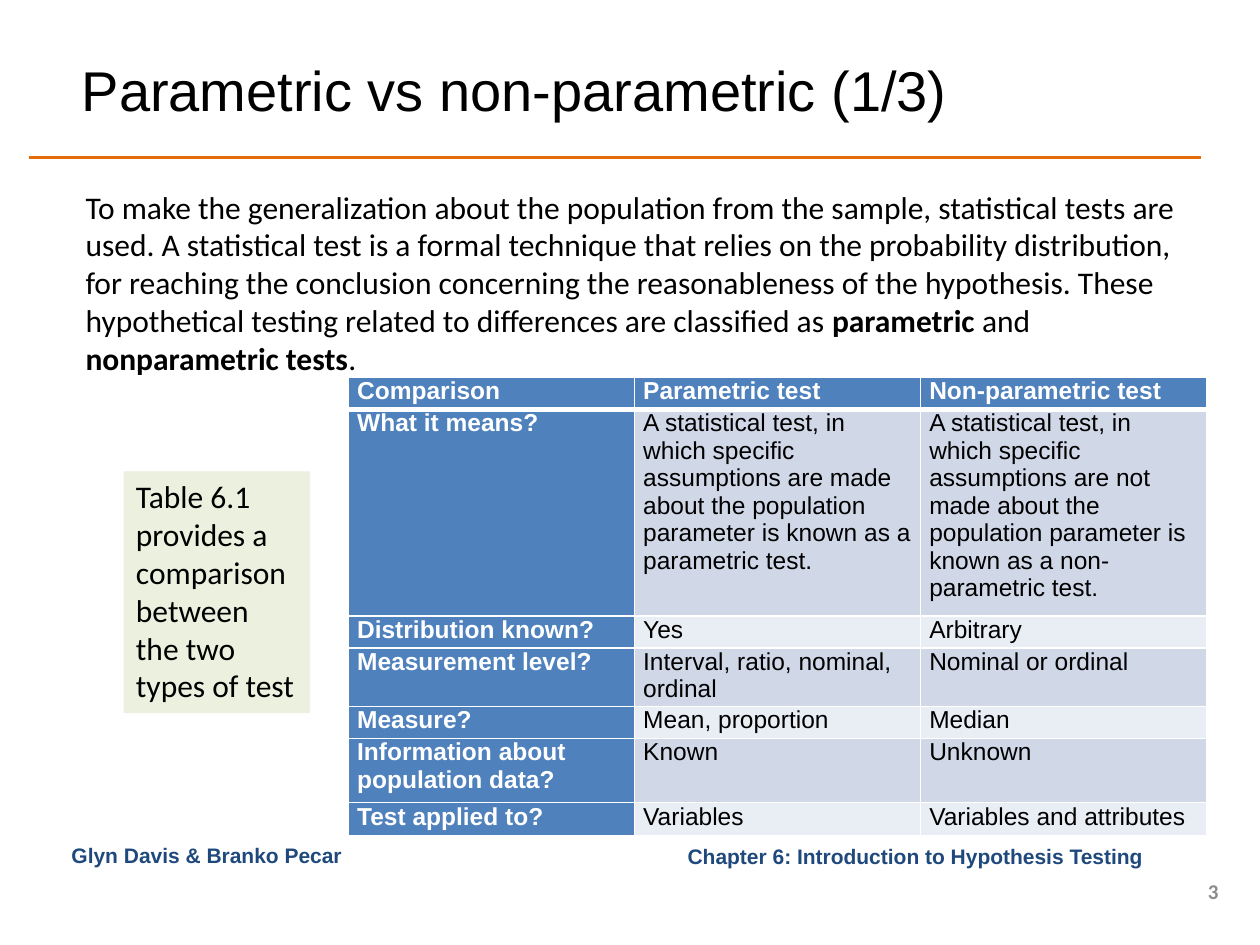
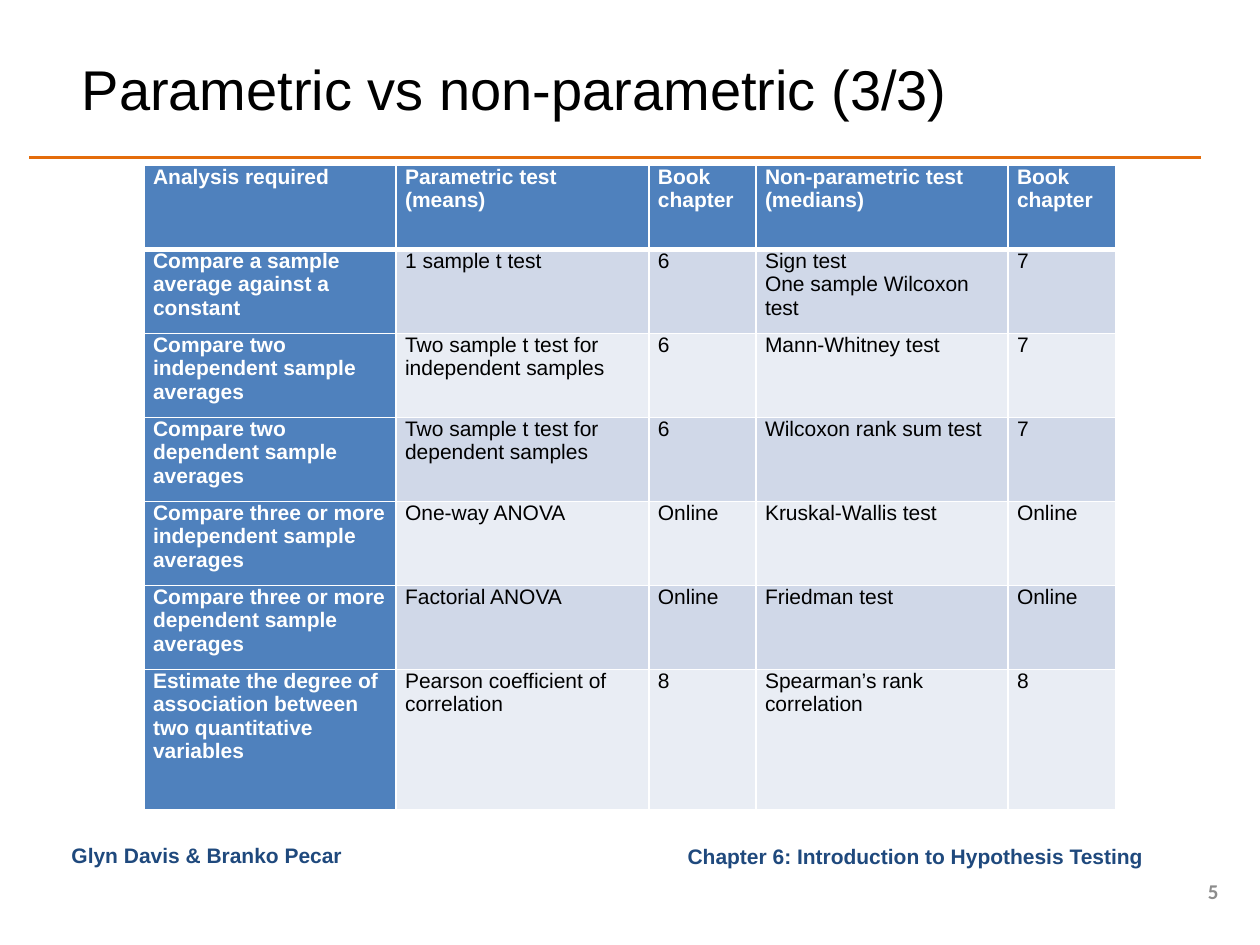
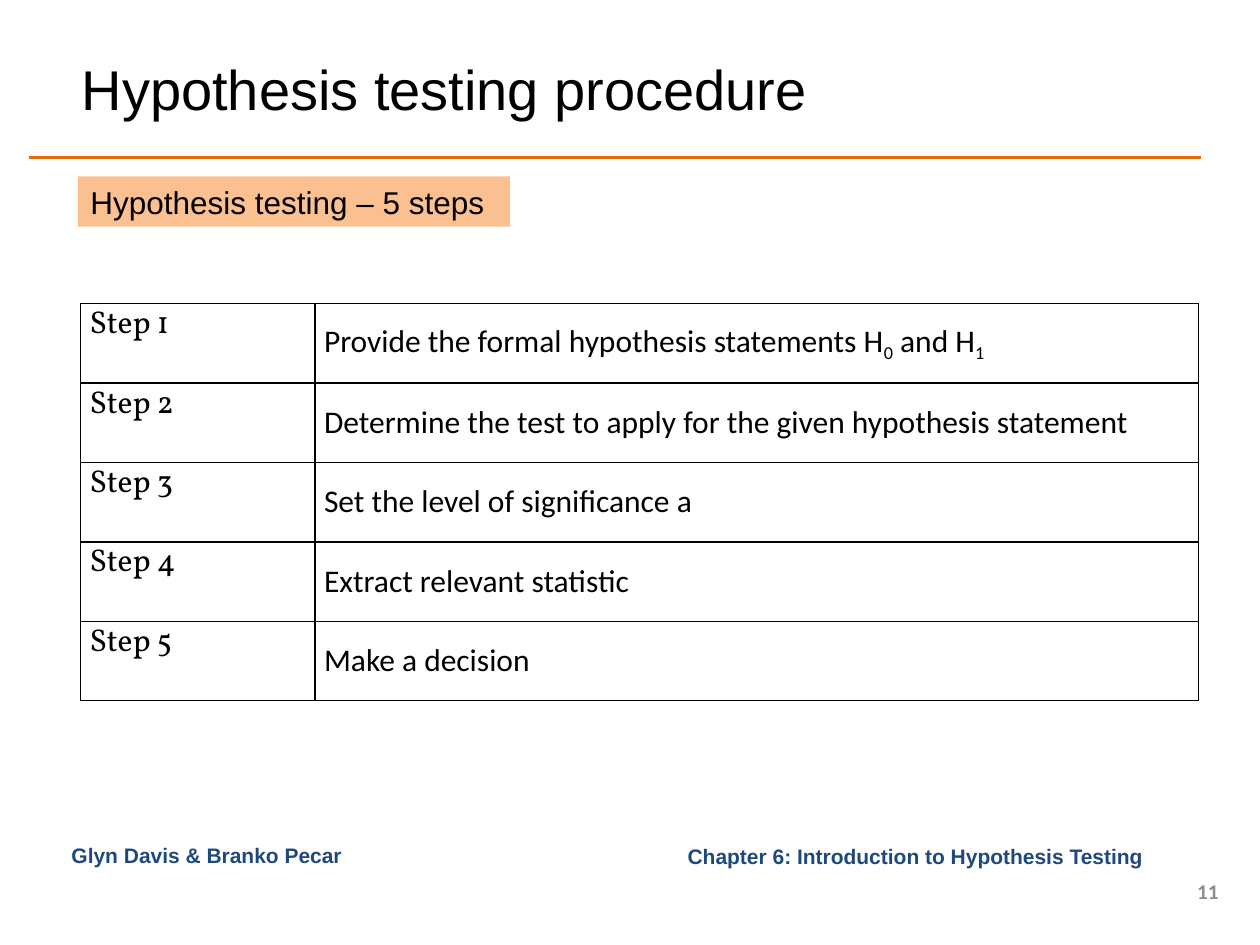
from pptx import Presentation
from pptx.dml.color import RGBColor
from pptx.enum import shapes, text
from pptx.oxml import parse_xml
from pptx.oxml.ns import nsdecls, qn
from pptx.util import Pt
from lxml import etree

# Shared style
COLORS = {"ink": "000000", "white": "FFFFFF", "rule": "E46C0A", "footer": "1F497D",
          "number": "8C8C8C", "head": "4F81BD", "band": "D0D8E8", "pale": "E9EDF4",
          "green": "EBF1DE", "orange": "FAC090"}
AUTHORS = "Glyn Davis & Branko Pecar"
CHAPTER = "Chapter 6: Introduction to Hypothesis Testing "
WIDE_TITLE = (39.6, 18.7, 649.4, 64.1)
TITLE = (39.6, 22.3, 545.8, 56.2)
MIDDLE = text.MSO_ANCHOR.MIDDLE
RIGHT = text.PP_ALIGN.RIGHT

# Content: text is a string, or a list of (text, run format)
BOLD = {"bold": True}
SUB = {"base": -25}
INTRO = [
    ("To make the generalization about the population from the sample, statistical tests are "
     "used. A statistical test is a formal technique that relies on the probability "
     "distribution, for reaching the conclusion concerning the reasonableness of the "
     "hypothesis. These hypothetical testing related to differences are classified as ", {}),
    ("parametric", BOLD), (" and ", {}), ("nonparametric tests", BOLD), (".", {})]
TABLE_NOTE = "Table 6.1 provides a comparison between the two types of test"
COMPARISON = [
    ("Comparison", "Parametric test", "Non-parametric test"),
    ("What it means?",
     "A statistical test, in which specific assumptions are made about the population "
     "parameter is known as a parametric test.",
     "A statistical test, in which specific assumptions are not made about the population "
     "parameter is known as a non-parametric test."),
    ("Distribution known?", "Yes", "Arbitrary"),
    ("Measurement level?", "Interval, ratio, nominal, ordinal", "Nominal or ordinal"),
    ("Measure?", "Mean, proportion", "Median"),
    ("Information about population data?", "Known", "Unknown"),
    ("Test applied to?", "Variables", "Variables and attributes")]
ANALYSES = [
    ("Analysis required", "Parametric test (means)", "Book chapter",
     "Non-parametric test (medians)", "Book chapter"),
    ("Compare a sample average against a constant", "1 sample t test", "6",
     "Sign test\nOne sample Wilcoxon test", "7"),
    ("Compare two independent sample averages",
     "Two sample t test for independent samples", "6", "Mann-Whitney test", "7"),
    ("Compare two dependent sample averages",
     "Two sample t test for dependent samples", "6", "Wilcoxon rank sum test", "7"),
    ("Compare three or more independent sample averages", "One-way ANOVA", "Online",
     "Kruskal-Wallis test", "Online"),
    ("Compare three or more dependent sample averages", "Factorial ANOVA", "Online",
     "Friedman test", "Online"),
    ("Estimate the degree of association between two quantitative variables",
     "Pearson coefficient of correlation", "8", "Spearman’s rank correlation", "8")]
STEPS = [
    [("Provide the formal hypothesis statements H", {}), ("0", SUB), (" and H", {}), ("1", SUB)],
    "Determine the test to apply for the given hypothesis statement",
    "Set the level of significance a",
    "Extract relevant statistic",
    "Make a decision"]


def rgb(name):
    return RGBColor.from_string(COLORS[name])


def write(tf, content, size=18, font="Calibri", color="ink", bold=False, align=None):
    """Fill a text frame; a newline in a plain string starts a paragraph."""
    lines = content.split("\n") if isinstance(content, str) else [content]
    for i, line in enumerate(lines):
        p = tf.add_paragraph() if i else tf.paragraphs[0]
        p.alignment = align
        for words, fmt in [(line, {})] if isinstance(line, str) else line:
            r = p.add_run()
            r.text = words
            r.font.size, r.font.name = Pt(size), font
            r.font.bold = fmt.get("bold", bold)
            r.font.color.rgb = rgb(color)
            if "base" in fmt:
                r._r.get_or_add_rPr().set("baseline", str(fmt["base"] * 1000))


def add_text(s, box, content, fill=None, anchor=text.MSO_ANCHOR.TOP, **fmt):
    box = [Pt(v) for v in box]
    if fill:
        sp = s.shapes.add_shape(shapes.MSO_SHAPE.RECTANGLE, *box)
        sp.shadow.inherit = False
        sp.fill.solid()
        sp.fill.fore_color.rgb = rgb(fill)
        sp.line.fill.background()
    else:
        sp = s.shapes.add_textbox(*box)
    tf = sp.text_frame
    tf.word_wrap = True
    tf.vertical_anchor = anchor
    write(tf, content, **{"align": text.PP_ALIGN.LEFT, **fmt})


def set_borders(cell, color, top=1, bottom=1):
    tcPr = cell._tc.get_or_add_tcPr()
    for i, (side, width) in enumerate([("L", 1), ("R", 1), ("T", top), ("B", bottom)]):
        tcPr.insert(i, parse_xml(
            f'<a:ln{side} {nsdecls("a")} w="{Pt(width)}"><a:solidFill>'
            f'<a:srgbClr val="{COLORS[color]}"/></a:solidFill></a:ln{side}>'))


def add_grid(s, left, top, cols, heights):
    """Add a plain table with the given column widths and row heights."""
    table = s.shapes.add_table(len(heights), len(cols), Pt(left), Pt(top),
                               Pt(sum(cols)), Pt(sum(heights))).table
    table.first_row = table.horz_banding = False
    for parts, sizes, side in ((table.columns, cols, "width"), (table.rows, heights, "height")):
        for part, size in zip(parts, sizes):
            setattr(part, side, Pt(size))
    for cell in table.iter_cells():
        cell.margin_left = cell.margin_right = Pt(5.1)
        cell.margin_top = cell.margin_bottom = 0
    return table


def add_banded_table(s, left, top, cols, heights, rows, size):
    table = add_grid(s, left, top, cols, heights)
    for i, row in enumerate(rows):
        for j, words in enumerate(row):
            cell = table.cell(i, j)
            head = i == 0 or j == 0
            cell.fill.solid()
            cell.fill.fore_color.rgb = rgb("head" if head else "band" if i % 2 else "pale")
            set_borders(cell, "white", top=3 if i == 1 else 1, bottom=3 if i == 0 else 1)
            write(cell.text_frame, words, size=size, font="Arial", bold=head,
                  color="white" if head else "ink")


def add_slide(prs, title, number, title_box=TITLE):
    """Blank slide with the rule, title and footers."""
    s = prs.slides.add_slide(prs.slide_layouts[6])
    rule = s.shapes.add_connector(shapes.MSO_CONNECTOR.STRAIGHT,
                                  Pt(16.6), Pt(90), Pt(686.2), Pt(90))
    rule.line.color.rgb, rule.line.width = rgb("rule"), Pt(2)
    etree.SubElement(rule._element.spPr, qn("a:effectLst"))
    footer = {"size": 12, "font": "Arial", "color": "footer", "bold": True}
    add_text(s, (270, 478.1, 393.8, 22.3), CHAPTER, anchor=MIDDLE, align=RIGHT, **footer)
    add_text(s, title_box, title, anchor=MIDDLE, size=32, font="Arial")
    add_text(s, (669.6, 500.4, 33.8, 17.3), str(number), anchor=MIDDLE, align=RIGHT,
             size=12, color="number", bold=True)
    add_text(s, (33.8, 478.1, 213.8, 22.3), AUTHORS, **footer)
    return s


def main():
    prs = Presentation()
    prs.slide_width, prs.slide_height = Pt(720), Pt(540)

    # Comparison of the two kinds of test
    s = add_slide(prs, "Parametric vs non-parametric (1/3)", 3, WIDE_TITLE)
    add_text(s, (41.8, 103.7, 647.3, 116.6), INTRO)
    add_text(s, (70.6, 269.3, 106.6, 138.2), TABLE_NOTE, fill="green")
    add_banded_table(s, 199, 215.6, [163.5] * 3, [18.3, 118, 18.3, 33.7, 18.3, 36.6, 18.6],
                     COMPARISON, size=14)

    # Which test for which analysis
    s = add_slide(prs, "Parametric vs non-parametric (3/3)", 5)
    add_banded_table(s, 82.4, 94.5, [144, 144.5, 61.2, 144, 61.2], [48] * 6 + [80],
                     ANALYSES, size=12)

    # The five steps
    s = add_slide(prs, "Hypothesis testing procedure", 11)
    table = add_grid(s, 46.1, 173.5, [134, 504.7], [45.4] * len(STEPS))
    for i, step in enumerate(STEPS):
        label, body = table.cell(i, 0), table.cell(i, 1)
        write(label.text_frame, f"Step {i + 1}", font="Vollkorn")
        write(body.text_frame, step)
        body.vertical_anchor = MIDDLE
        for cell in (label, body):
            cell.fill.background()
            set_borders(cell, "ink")
    add_text(s, (44.6, 100.8, 247, 28.8), "Hypothesis testing – 5 steps", fill="orange",
             font="Arial")

    prs.save("out.pptx")


if __name__ == "__main__":
    main()
